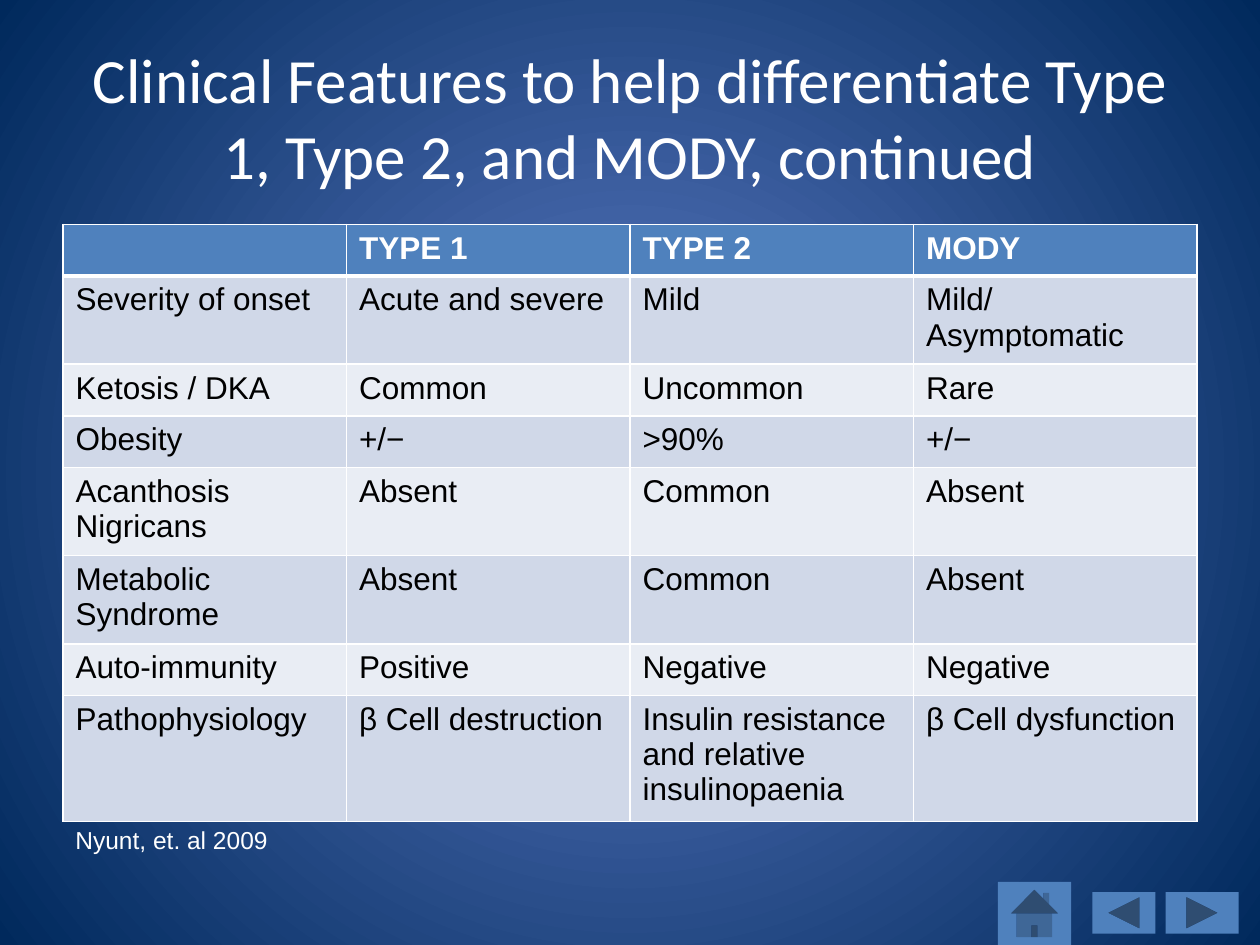
import pptx
import pptx.dml.color
import pptx.enum.shapes
import pptx.enum.text
import pptx.oxml
import pptx.oxml.ns
import pptx.util
from pptx.util import Inches

TITLE = "Clinical Features to help differentiate Type 1, Type 2, and MODY, continued"
CITATION = "Nyunt, et. al 2009"
FEATURES = [
    ("", "TYPE 1", "TYPE 2", "MODY"),
    ("Severity of onset", "Acute and severe", "Mild", "Mild/Asymptomatic"),
    ("Ketosis / DKA", "Common", "Uncommon", "Rare"),
    ("Obesity", "+/−", ">90%", "+/−"),
    ("Acanthosis Nigricans", "Absent", "Common", "Absent"),
    ("Metabolic Syndrome", "Absent", "Common", "Absent"),
    ("Auto-immunity", "Positive", "Negative", "Negative"),
    ("Pathophysiology", "β Cell destruction",
     "Insulin resistance and relative insulinopaenia", "β Cell dysfunction"),
]
BUTTONS = [
    ("ACTION_BUTTON_BACK_OR_PREVIOUS", 8.67, 7.08, 0.5, 0.33),
    ("ACTION_BUTTON_FORWARD_OR_NEXT", 9.25, 7.08, 0.58, 0.33),
    ("ACTION_BUTTON_HOME", 7.92, 7, 0.58, 0.5),
]
BACKDROP = ("5E7CC5", "00295C")
BLUE, WHITE, BLACK = "4F81BD", "FFFFFF", "000000"
BANDS = ("D0D8E8", "E9EDF4")
COLUMN_WIDTH, ROW_HEIGHT = 2.25, 0.41


def color(value):
    return pptx.dml.color.RGBColor.from_string(value)


def xml(markup):
    return pptx.oxml.parse_xml(markup.replace(
        " ", f" {pptx.oxml.ns.nsdecls('a')} ", 1))


def paint(target, value):
    target.fill.solid()
    target.fill.fore_color.rgb = color(value)


def style(paragraph, size, value, font="Arial", bold=False):
    paragraph.font.size = pptx.util.Pt(size)
    paragraph.font.name = font
    paragraph.font.bold = bold
    paragraph.font.color.rgb = color(value)


def add_text(slide, text, box, size, font):
    frame = slide.shapes.add_textbox(*map(Inches, box)).text_frame
    frame.word_wrap = True
    frame.text = text
    style(frame.paragraphs[0], size, WHITE, font)
    return frame


def set_borders(cell, top, bottom):
    """Draw white cell borders; top and bottom are widths in points."""
    properties = cell._tc.get_or_add_tcPr()
    widths = {"lnL": 1, "lnR": 1, "lnT": top, "lnB": bottom}
    for index, (side, width) in enumerate(widths.items()):
        properties.insert(index, xml(
            f'<a:{side} w="{pptx.util.Pt(width)}"><a:solidFill>'
            f'<a:srgbClr val="{WHITE}"/></a:solidFill></a:{side}>'))


def set_backdrop(slide):
    fill = slide.background.fill
    fill.gradient()
    for position, (stop, value) in enumerate(zip(fill.gradient_stops, BACKDROP)):
        stop.position = position
        stop.color.rgb = color(value)
    linear = slide.background._cSld.find(".//" + pptx.oxml.ns.qn("a:lin"))
    linear.getparent().replace(linear, xml(
        '<a:path path="circle"><a:fillToRect l="50000" t="50000" '
        'r="50000" b="50000"/></a:path>'))


def add_buttons(slide):
    for kind, *box in BUTTONS:
        button = slide.shapes.add_shape(
            pptx.enum.shapes.MSO_SHAPE[kind], *map(Inches, box))
        button.shadow.inherit = False
        paint(button, BLUE)
        button.line.fill.background()


def add_features(slide):
    rows, columns = len(FEATURES), len(FEATURES[0])
    table = slide.shapes.add_table(
        rows, columns, Inches(0.5), Inches(1.78),
        Inches(columns * COLUMN_WIDTH), Inches(rows * ROW_HEIGHT)).table
    for r, texts in enumerate(FEATURES):
        header = r == 0
        for c, text in enumerate(texts):
            cell = table.cell(r, c)
            cell.text = text
            style(cell.text_frame.paragraphs[0], 18,
                  WHITE if header else BLACK, bold=header)
            paint(cell, BLUE if header else BANDS[(r - 1) % 2])
            set_borders(cell, top=3 if r == 1 else 1, bottom=3 if header else 1)


def main():
    deck = pptx.Presentation()
    deck.slide_width, deck.slide_height = Inches(10), Inches(7.5)
    slide = deck.slides.add_slide(deck.slide_layouts[6])
    set_backdrop(slide)
    add_buttons(slide)
    title = add_text(slide, TITLE, (0.5, 0.3, 9, 1.25), 36, "Calibri")
    title.vertical_anchor = pptx.enum.text.MSO_ANCHOR.MIDDLE
    title.paragraphs[0].alignment = pptx.enum.text.PP_ALIGN.CENTER
    add_features(slide)
    add_text(slide, CITATION, (0.5, 6.5, 3.25, 0.34), 14, "Arial")
    deck.save("out.pptx")


if __name__ == "__main__":
    main()
